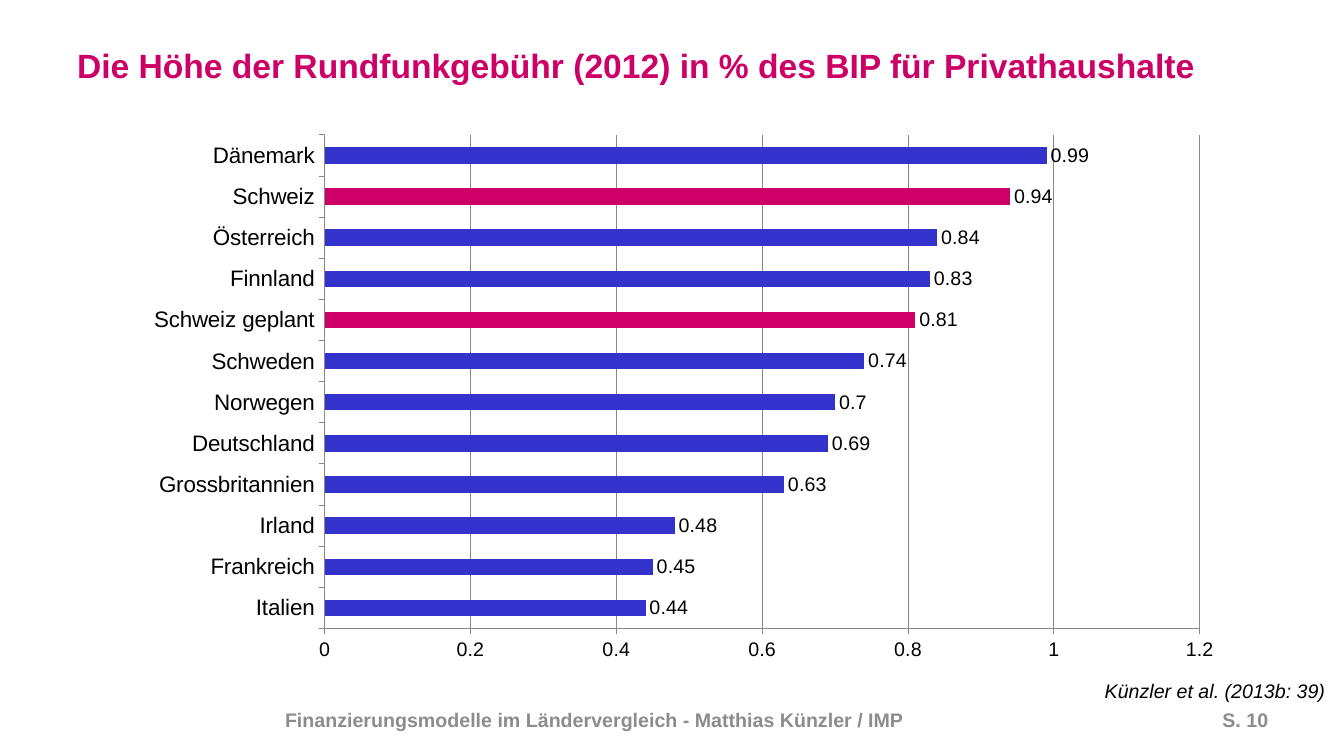
from pptx import Presentation
from pptx.chart.data import CategoryChartData
from pptx.dml.color import RGBColor
from pptx.enum.chart import XL_CHART_TYPE, XL_LABEL_POSITION, XL_TICK_MARK
from pptx.enum.text import MSO_ANCHOR, PP_ALIGN
from pptx.util import Pt

COLORS = {"magenta": "CC0066", "blue": "3333CC", "gray": "8C8C8C",
          "line": "888888", "black": "000000", "white": "FFFFFF"}
FEES = {"Italien": 0.44, "Frankreich": 0.45, "Irland": 0.48,
        "Grossbritannien": 0.63, "Deutschland": 0.69, "Norwegen": 0.7,
        "Schweden": 0.74, "Schweiz geplant": 0.81, "Finnland": 0.83,
        "Österreich": 0.84, "Schweiz": 0.94, "Dänemark": 0.99}


def style_font(font, size, color="black", bold=False, italic=False):
    font.name = "Arial"
    font.size = Pt(size)
    font.bold = bold
    font.italic = italic
    font.color.rgb = RGBColor.from_string(COLORS[color])


def add_text(page, text, left, top, width, height, align=PP_ALIGN.LEFT,
             fill=None, **font_format):
    box = page.shapes.add_textbox(Pt(left), Pt(top), Pt(width), Pt(height))
    if fill:
        box.fill.solid()
        box.fill.fore_color.rgb = RGBColor.from_string(COLORS[fill])
    frame = box.text_frame
    frame.word_wrap = True
    frame.vertical_anchor = MSO_ANCHOR.MIDDLE
    para = frame.paragraphs[0]
    para.alignment = align
    span = para.add_run()
    span.text = text
    style_font(span.font, **font_format)


deck = Presentation()
deck.slide_width, deck.slide_height = Pt(960), Pt(540)
page = deck.slides.add_slide(deck.slide_layouts[6])

add_text(page, "Die Höhe der Rundfunkgebühr (2012) in % des BIP für Privathaushalte",
         48, 21.6, 864, 49.7, size=24, color="magenta", bold=True)
add_text(page, "Finanzierungsmodelle im Ländervergleich - Matthias Künzler / IMP",
         196.5, 496.8, 578, 34, size=14, color="gray", bold=True)
add_text(page, "S. 10", 820, 496.8, 93, 34, align=PP_ALIGN.RIGHT,
         size=14, color="gray", bold=True)

# Bar chart
data = CategoryChartData()
data.categories = list(FEES)
data.add_series("Rundfunkgebühr in % des BIP", list(FEES.values()))
chart = page.shapes.add_chart(XL_CHART_TYPE.BAR_CLUSTERED, Pt(94.3), Pt(88.6),
                              Pt(788.4), Pt(391), data).chart
chart.has_legend = False
chart.has_title = False
style_font(chart.font, 10)

line_color = RGBColor.from_string(COLORS["line"])
value_axis = chart.value_axis
value_axis.minimum_scale, value_axis.maximum_scale = 0, 1.2
value_axis.major_unit = 0.2
value_axis.has_major_gridlines = True
for axis, size in ((chart.category_axis, 16), (value_axis, 14)):
    axis.major_tick_mark = XL_TICK_MARK.OUTSIDE
    axis.minor_tick_mark = XL_TICK_MARK.NONE
    style_font(axis.tick_labels.font, size)
    axis.format.line.color.rgb = line_color
    axis.format.line.width = Pt(0.75)
gridlines = value_axis.major_gridlines.format.line
gridlines.color.rgb = line_color
gridlines.width = Pt(0.75)

plot = chart.plots[0]
plot.gap_width = 150
plot.vary_by_categories = False
plot.has_data_labels = True
labels = plot.data_labels
labels.show_value = True
labels.position = XL_LABEL_POSITION.OUTSIDE_END
style_font(labels.font, 14)

bars = plot.series[0]
bars.invert_if_negative = False
bars.format.fill.solid()
bars.format.fill.fore_color.rgb = RGBColor.from_string(COLORS["blue"])
for index, country in enumerate(FEES):
    if country.startswith("Schweiz"):
        fill = bars.points[index].format.fill
        fill.solid()
        fill.fore_color.rgb = RGBColor.from_string(COLORS["magenta"])

add_text(page, "Künzler et al. (2013b: 39)", 782, 479.5, 178, 28,
         fill="white", size=14, italic=True)

deck.save("out.pptx")
